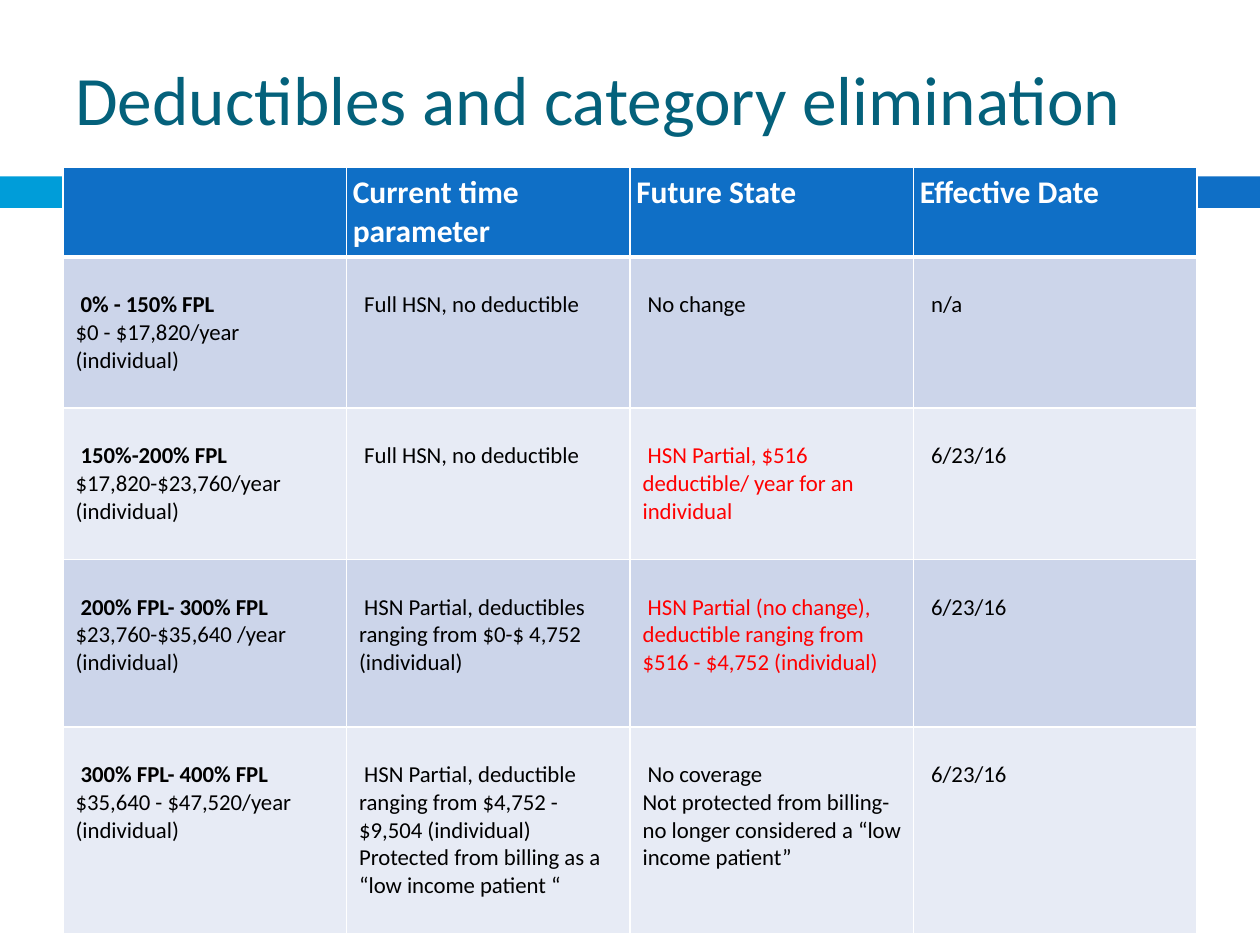
"""Builds the slide on deductibles and category elimination."""
import lxml.etree
import pptx
import pptx.dml.color
import pptx.enum.shapes
import pptx.enum.text
import pptx.oxml.ns
import pptx.util

Inches = pptx.util.Inches
Pt = pptx.util.Pt

WHITE, BLACK, RED = "FFFFFF", "000000", "FF0000"
BLUE, CYAN, TEAL = "0F6FC6", "009DD9", "04617B"
BANDS = ("CCD5EA", "E7EBF5")

HEADERS = ("", "Current time parameter", "Future State", "Effective Date")
ROWS = (
    (" 0% - 150% FPL\n$0 - $17,820/year (individual)",
     " Full HSN, no deductible", " No change", " n/a"),
    (" 150%-200% FPL\n$17,820-$23,760/year (individual)",
     " Full HSN, no deductible",
     " HSN Partial, $516 deductible/ year for an individual", " 6/23/16"),
    (" 200% FPL- 300% FPL\n$23,760-$35,640 /year (individual)",
     " HSN Partial, deductibles ranging from $0-$ 4,752 (individual)",
     " HSN Partial (no change), deductible ranging from $516 - $4,752 (individual)",
     " 6/23/16"),
    (" 300% FPL- 400% FPL\n$35,640 - $47,520/year (individual)",
     " HSN Partial, deductible ranging from $4,752 - $9,504 (individual)\n"
     "Protected from billing as a “low income patient “",
     " No coverage\nNot protected from billing- no longer considered a “low income patient”",
     " 6/23/16"),
)
ROW_HEIGHTS = (0.71, 1.2, 1.2, 1.33, 1.64)
RED_CELLS = {(2, 2), (3, 2)}


def color(value):
    return pptx.dml.color.RGBColor.from_string(value)


class SlideBuilder:
    def __init__(self, slide, font="Calibri"):
        self.slide = slide
        self.font = font

    def style(self, paragraph, size, value, bold=False):
        paragraph.font.name = self.font
        paragraph.font.size = Pt(size)
        paragraph.font.bold = bold
        paragraph.font.color.rgb = color(value)

    def bar(self, left, top, width, height, fill):
        shape = self.slide.shapes.add_shape(
            pptx.enum.shapes.MSO_SHAPE.RECTANGLE,
            Inches(left), Inches(top), Inches(width), Inches(height))
        shape.shadow.inherit = False
        shape.fill.solid()
        shape.fill.fore_color.rgb = color(fill)
        shape.line.fill.background()

    def title(self, text, left, top, width, height):
        box = self.slide.shapes.add_textbox(
            Inches(left), Inches(top), Inches(width), Inches(height))
        frame = box.text_frame
        frame.word_wrap = True
        frame.vertical_anchor = pptx.enum.text.MSO_ANCHOR.MIDDLE
        frame.text = text
        self.style(frame.paragraphs[0], 39.6, TEAL)

    def border(self, cell, side, width):
        properties = cell._tc.get_or_add_tcPr()
        qn = pptx.oxml.ns.qn
        line = lxml.etree.SubElement(properties, qn(f"a:ln{side}"), w=str(Pt(width)))
        fill = lxml.etree.SubElement(line, qn("a:solidFill"))
        lxml.etree.SubElement(fill, qn("a:srgbClr"), val=WHITE)

    def cell(self, cell, text, fill, margins, borders):
        for side, width in borders.items():
            self.border(cell, side, width)
        cell.fill.solid()
        cell.fill.fore_color.rgb = color(fill)
        (cell.margin_left, cell.margin_top,
         cell.margin_right, cell.margin_bottom) = map(Inches, margins)
        cell.text = text
        return cell.text_frame.paragraphs

    def table(self, left, top, width, heights, headers, rows):
        frame = self.slide.shapes.add_table(
            len(heights), len(headers), Inches(left), Inches(top),
            Inches(width), Inches(sum(heights)))
        table = frame.table
        for row, height in zip(table.rows, heights):
            row.height = Inches(height)
        for column, header in enumerate(headers):
            paragraphs = self.cell(table.cell(0, column), header, BLUE,
                                   (0.05, 0.05, 0.05, 0.05),
                                   {"L": 1, "R": 1, "T": 1, "B": 3})
            self.style(paragraphs[0], 18, WHITE, bold=True)
        for row, texts in enumerate(rows, 1):
            borders = {"L": 1, "R": 1, "T": 3 if row == 1 else 1, "B": 1}
            for column, text in enumerate(texts):
                paragraphs = self.cell(table.cell(row, column), text,
                                       BANDS[(row - 1) % 2],
                                       (0.1, 0.27, 0.1, 0.05), borders)
                value = RED if (row, column) in RED_CELLS else BLACK
                for index, paragraph in enumerate(paragraphs):
                    self.style(paragraph, 13, value, bold=column == 0 and index == 0)


def main():
    presentation = pptx.Presentation()
    presentation.slide_width = Inches(10)
    presentation.slide_height = Inches(7.5)
    builder = SlideBuilder(presentation.slides.add_slide(presentation.slide_layouts[6]))
    builder.bar(0, 1.4, 0.58, 0.25, CYAN)
    builder.bar(0.65, 1.4, 9.35, 0.25, BLUE)
    builder.title("Deductibles and category elimination", 0.5, 0.3, 9, 0.95)
    builder.table(0.5, 1.33, 9, ROW_HEIGHTS, HEADERS, ROWS)
    presentation.save("out.pptx")


if __name__ == "__main__":
    main()
